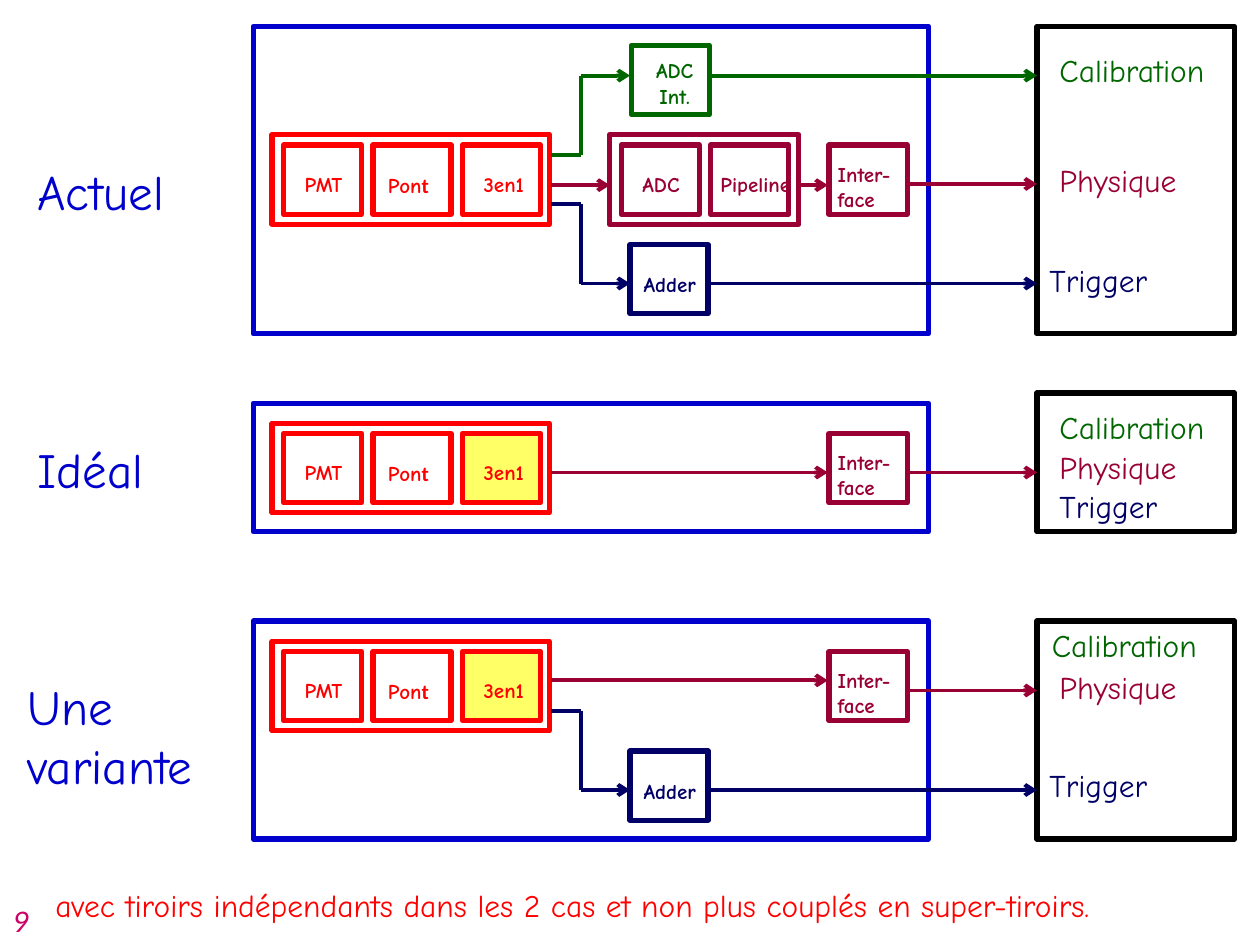
from dataclasses import dataclass

from lxml import etree
from pptx import Presentation
from pptx.dml.color import RGBColor
from pptx.enum.shapes import MSO_CONNECTOR as Connector, MSO_SHAPE as Shape
from pptx.enum.text import MSO_AUTO_SIZE as AutoSize, PP_ALIGN as Align
from pptx.oxml.ns import qn
from pptx.util import Inches, Pt


@dataclass(frozen=True)
class Theme:
    font: str = "Comic Neue"
    alt_font: str = "Calibri"
    blue: str = "0000CC"
    black: str = "000000"
    red: str = "FF0000"
    physics: str = "990033"
    calibration: str = "006600"
    trigger: str = "000066"
    yellow: str = "FFFF66"
    page: str = "CC0066"
    small: int = 12
    body: int = 18
    heading: int = 28
    box_line: float = 3
    wire_line: float = 2.25


THEME = Theme()

# Columns shared by the three schemes
MODULE_W, MODULE_H, MODULE_STEP = 0.62, 0.55, 0.71
FRAME_H = 0.71
DRAWER_X, DRAWER_END = 2.16, 4.37
BRANCH_X, ADDER_X = 4.61, 5
INTERFACE_X, INTERFACE_END = 6.58, 7.2
OUTPUT_X = 8.23


def add_run(paragraph, text, *, size, color, font=THEME.font, bold=False, italic=False):
    run = paragraph.add_run()
    run.text = text
    run.font.name = font
    run.font.size = Pt(size)
    run.font.bold = bold
    run.font.italic = italic
    run.font.color.rgb = RGBColor.from_string(color)


class Diagram:
    """Holds the theme and the current slide, and draws each kind of element."""

    def __init__(self, slide, theme):
        self.slide = slide
        self.theme = theme

    def box(self, x, y, w, h, color, fill=None):
        rect = self.slide.shapes.add_shape(
            Shape.RECTANGLE, Inches(x), Inches(y), Inches(w), Inches(h))
        rect.shadow.inherit = False
        rect.line.color.rgb = RGBColor.from_string(color)
        rect.line.width = Pt(self.theme.box_line)
        if fill:
            rect.fill.solid()
            rect.fill.fore_color.rgb = RGBColor.from_string(fill)
        else:
            rect.fill.background()

    def module(self, x, y, color, fill=None):
        self.box(x, y, MODULE_W, MODULE_H, color, fill)

    def wire(self, *points, color):
        """Straight segments through the points, with an arrowhead on the last."""
        segments = list(zip(points, points[1:]))
        for number, (start, end) in enumerate(segments, 1):
            segment = self.slide.shapes.add_connector(
                Connector.STRAIGHT, *map(Inches, start + end))
            segment.line.color.rgb = RGBColor.from_string(color)
            segment.line.width = Pt(self.theme.wire_line)
            properties = segment._element.spPr
            if number == len(segments):
                etree.SubElement(properties.get_or_add_ln(), qn("a:tailEnd"), type="arrow")
            etree.SubElement(properties, qn("a:effectLst"))

    def text(self, x, y, w, h, text, *, align=Align.LEFT, alt_end="", **style):
        """One paragraph per line; alt_end closes the text in the second font."""
        area = self.slide.shapes.add_textbox(Inches(x), Inches(y), Inches(w), Inches(h))
        frame = area.text_frame
        frame.word_wrap = False
        frame.auto_size = AutoSize.SHAPE_TO_FIT_TEXT
        for number, line in enumerate(text.split("\n")):
            paragraph = frame.add_paragraph() if number else frame.paragraphs[0]
            paragraph.alignment = align
            add_run(paragraph, line, **style)
        if alt_end:
            add_run(paragraph, alt_end, **{**style, "font": self.theme.alt_font})

    def label(self, x, y, w, text, color, h=0.3, **extra):
        self.text(x, y, w, h, text, size=self.theme.small, color=color, bold=True, **extra)

    def heading(self, x, y, w, text, h=0.57):
        self.text(x, y, w, h, text, size=self.theme.heading, color=self.theme.blue)

    def outputs(self, calibration, physics, trigger):
        """Names of the three outputs, each at its own (x, y)."""
        for place, width, name, color in (
                (calibration, 1.48, "Calibration", self.theme.calibration),
                (physics, 1.2, "Physique", self.theme.physics),
                (trigger, 1.09, "Trigger", self.theme.trigger)):
            self.text(*place, width, 0.4, name, size=self.theme.body, color=color)

    def enclosures(self, y, h, output_y=None):
        """Blue detector box and black output box, sharing their bottom edge."""
        output_y = output_y or y
        self.box(2.01, y, 5.36, h, self.theme.blue)
        self.box(OUTPUT_X, output_y, 1.57, y + h - output_y, self.theme.black)

    def drawer(self, y, fill=None):
        """Red frame with its three modules."""
        red = self.theme.red
        self.box(DRAWER_X, y, 2.2, FRAME_H, red)
        for column in range(3):
            self.module(2.25 + column * MODULE_STEP, y + 0.08, red,
                        fill if column == 2 else None)
        self.label(2.32, y + 0.24, 0.55, "PMT", red)
        self.label(2.98, y + 0.25, 0.6, "Pon", red, alt_end="t")
        self.label(3.74, y + 0.24, 0.59, "3en1", red)

    def interface(self, y):
        color = self.theme.physics
        self.module(INTERFACE_X, y + 0.08, color)
        self.label(6.55, y + 0.16, 0.74, "Inter-\nface", color, h=0.5)
        self.wire((INTERFACE_END, y + 0.39), (OUTPUT_X, y + 0.39), color=color)

    def adder(self, y):
        """Trigger branch: from the drawer down to the adder, then out."""
        color = self.theme.trigger
        start, end = y + 0.55, y + 1.18
        self.module(ADDER_X, y + 0.87, color)
        self.label(5.01, y + 1.04, 0.7, "Adder", color)
        self.wire((DRAWER_END, start), (BRANCH_X, start), (BRANCH_X, end),
                  (ADDER_X, end), color=color)
        self.wire((5.63, end), (OUTPUT_X, end), color=color)

    def digitizer(self, y):
        """ADC and pipeline between the drawer and the interface."""
        color, middle = self.theme.physics, y + 0.4
        self.box(4.84, y, 1.5, FRAME_H, color)
        for column in range(2):
            self.module(4.93 + column * MODULE_STEP, y + 0.08, color)
        self.label(5, y + 0.24, 0.55, "ADC", color)
        self.label(5.62, y + 0.24, 0.8, "Pipeline", color)
        self.wire((DRAWER_END, middle), (4.84, middle), color=color)
        self.wire((6.34, middle), (6.57, middle), color=color)

    def integrator(self, y):
        """Calibration branch: from the drawer up to the ADC, then out."""
        color = self.theme.calibration
        start, end = y + 0.16, y - 0.47
        self.module(5.01, y - 0.71, color)
        self.label(5.08, y - 0.66, 0.55, "ADC\nInt.", color, h=0.51, align=Align.CENTER)
        self.wire((DRAWER_END, start), (BRANCH_X, start), (BRANCH_X, end),
                  (ADDER_X, end), color=color)
        self.wire((5.63, end), (OUTPUT_X, end), color=color)


def main():
    prs = Presentation()
    prs.slide_width, prs.slide_height = Inches(10), Inches(7.5)
    diagram = Diagram(prs.slides.add_slide(prs.slide_layouts[6]), THEME)

    # Current scheme
    diagram.heading(0.2, 1.23, 1.4, "Actuel")
    diagram.enclosures(0.21, 2.44)
    diagram.drawer(1.07)
    diagram.digitizer(1.07)
    diagram.interface(1.07)
    diagram.integrator(1.07)
    diagram.adder(1.07)
    diagram.outputs((8.31, 0.36), (8.31, 1.23), (8.23, 2.02))

    # Ideal scheme
    diagram.heading(0.2, 3.44, 1.17, "Idéal")
    diagram.enclosures(3.2, 1.02, output_y=3.12)
    diagram.drawer(3.36, THEME.yellow)
    diagram.interface(3.36)
    diagram.wire((DRAWER_END, 3.75), (6.57, 3.75), color=THEME.physics)
    diagram.outputs((8.31, 3.19), (8.31, 3.51), (8.31, 3.82))

    # Variant scheme
    diagram.heading(0.12, 5.32, 1.7, "Une\nvariante", h=1.04)
    diagram.enclosures(4.93, 1.73)
    diagram.drawer(5.09, THEME.yellow)
    diagram.interface(5.09)
    diagram.adder(5.09)
    diagram.wire((DRAWER_END, 5.4), (6.57, 5.4), color=THEME.physics)
    diagram.outputs((8.25, 4.92), (8.31, 5.25), (8.23, 6.03))

    # Remark and page number
    diagram.text(0.34, 6.98, 9.38, 0.4,
                 "avec tiroirs indépendants dans les 2 cas et non plus couplés en super-tiroirs.",
                 size=THEME.body, color=THEME.red)
    diagram.text(0, 7.1, 0.33, 0.4, "9", size=THEME.body, color=THEME.page,
                 font=THEME.alt_font, italic=True)

    prs.save("out.pptx")


if __name__ == "__main__":
    main()
